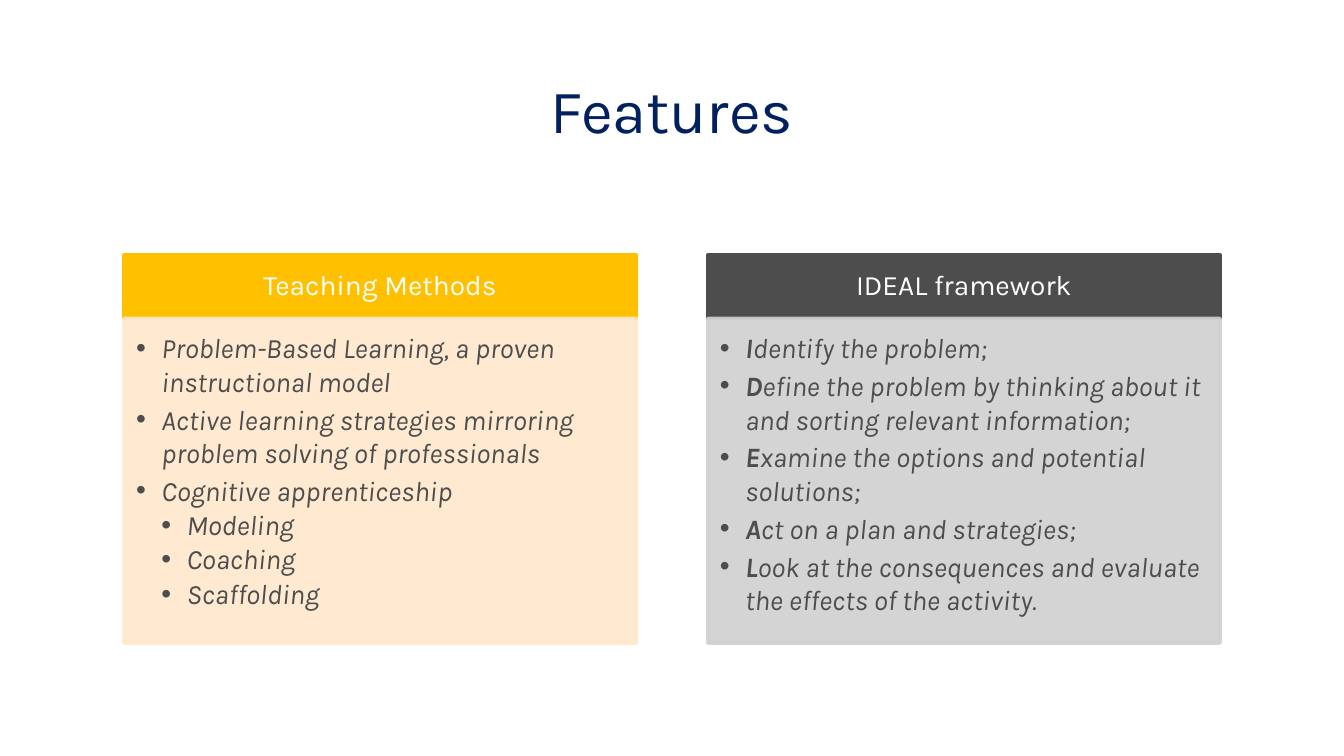
from lxml import etree
from pptx import Presentation, util as u
from pptx.dml.color import RGBColor
from pptx.enum import shapes, text
from pptx.oxml import ns

NAVY = RGBColor(0x00, 0x20, 0x60)
GOLD = RGBColor(0xFF, 0xC0, 0x00)
CREAM = RGBColor(0xFF, 0xE8, 0xCC)
DARK = RGBColor(0x4D, 0x4D, 0x4D)
PALE = RGBColor(0xD0, 0xD0, 0xD0)
WHITE = RGBColor(0xFF, 0xFF, 0xFF)

WIDE, HIGH = 13.33, 7.5
LEFT, TOP = 1.23, 2.53
COL, STEP = 5.08, 5.79
HEAD, BODY = 0.63, 3.22
INDENT = 0.25

# Each point is (level, bold start, rest)
PANELS = [
    ("Teaching Methods", GOLD, CREAM, [
        (1, "", "Problem-Based Learning, a proven instructional model"),
        (1, "", "Active learning strategies mirroring problem solving of professionals"),
        (1, "", "Cognitive apprenticeship"),
        (2, "", "Modeling"),
        (2, "", "Coaching"),
        (2, "", "Scaffolding"),
    ]),
    ("IDEAL framework", DARK, PALE, [
        (1, "I", "dentify the problem;"),
        (1, "D", "efine the problem by thinking about it and sorting relevant information;"),
        (1, "E", "xamine the options and potential solutions;"),
        (1, "A", "ct on a plan and strategies;"),
        (1, "L", "ook at the consequences and evaluate the effects of the activity."),
    ]),
]


def add_run(para, words, size, color, **form):
    run = para.add_run()
    run.text = words
    run.font.color.rgb = color
    for key, val in {"name": "Karla", "size": u.Pt(size), **form}.items():
        setattr(run.font, key, val)


def add_box(x, y, high, color, pads, alpha=100):
    """Add a filled panel part and return its text frame; pads run left, top, right, bottom."""
    box = slide.shapes.add_shape(shapes.MSO_SHAPE.RECTANGLE,
                                 *map(u.Inches, (x, y, COL, high)))
    box.shadow.inherit = False
    box.line.width = u.Pt(2.75)
    for fill in (box.fill, box.line.fill):
        fill.solid()
        fill.fore_color.rgb = color
    if alpha < 100:
        for tone in box._element.spPr.iter(ns.qn("a:srgbClr")):
            etree.SubElement(tone, ns.qn("a:alpha"), val=str(alpha * 1000))
    frame = box.text_frame
    frame.word_wrap = True
    for side, pad in zip(("left", "top", "right", "bottom"), pads):
        setattr(frame, "margin_" + side, u.Inches(pad))
    return frame


deck = Presentation()
deck.slide_width, deck.slide_height = u.Inches(WIDE), u.Inches(HIGH)
slide = deck.slides.add_slide(deck.slide_layouts[5])

title = slide.shapes.title
place = {"left": 0.7, "top": 0.1 * HIGH, "width": 11.93, "height": 1.62}
for key, val in place.items():
    setattr(title, key, u.Inches(val))
title.text_frame.vertical_anchor = text.MSO_ANCHOR.TOP
para = title.text_frame.paragraphs[0]
para.alignment = text.PP_ALIGN.CENTER
para.line_spacing = 0.89
add_run(para, "Features", 44, NAVY)

for col, (name, strong, soft, points) in enumerate(PANELS):
    x = LEFT + col * STEP
    frame = add_box(x, TOP, HEAD, strong, (0.16, 0.09, 0.16, 0.09))
    frame.vertical_anchor = text.MSO_ANCHOR.MIDDLE
    para = frame.paragraphs[0]
    para.alignment = text.PP_ALIGN.CENTER
    para.line_spacing = 0.9
    add_run(para, name, 20, WHITE)

    frame = add_box(x, TOP + HEAD, BODY, soft, (0.12, 0.12, 0.16, 0.17), 90)
    frame.vertical_anchor = text.MSO_ANCHOR.TOP
    for row, (level, start, rest) in enumerate(points):
        para = frame.add_paragraph() if row else frame.paragraphs[0]
        form = {"alignment": text.PP_ALIGN.LEFT, "level": level,
                "space_after": u.Pt(3), "line_spacing": 1.0 if level == 1 else 0.9}
        for key, val in form.items():
            setattr(para, key, val)
        props = para._p.get_or_add_pPr()
        props.set("marL", str(u.Inches(level * INDENT)))
        props.set("indent", str(-u.Inches(INDENT)))
        etree.SubElement(props, ns.qn("a:buFont"), typeface="Arial")
        etree.SubElement(props, ns.qn("a:buChar"), char="•")
        if start:
            add_run(para, start, 20, DARK, bold=True, italic=True)
        add_run(para, rest, 20, DARK, italic=True)

deck.save("out.pptx")
